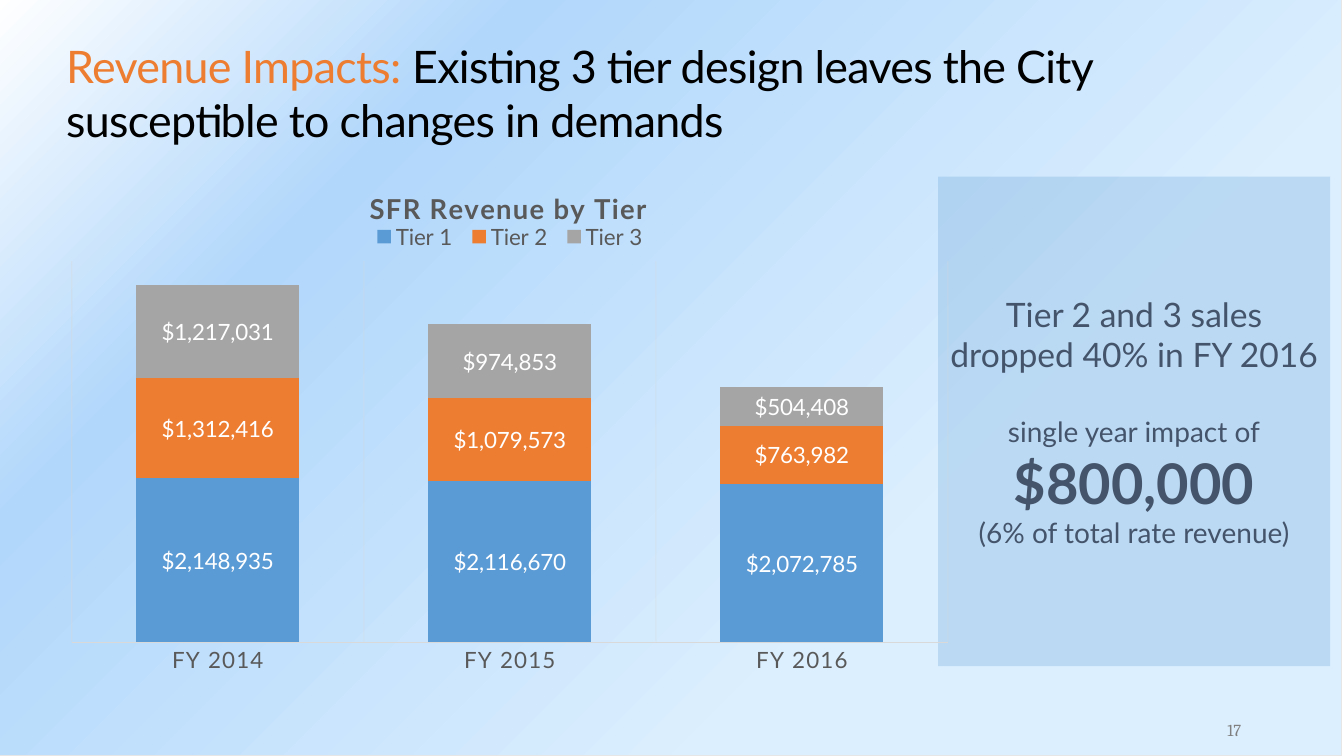
from pptx import Presentation
from pptx.chart.data import CategoryChartData
from pptx.dml.color import RGBColor
from pptx.enum.chart import XL_CHART_TYPE, XL_LABEL_POSITION, XL_LEGEND_POSITION, XL_TICK_MARK
from pptx.enum.shapes import MSO_SHAPE
from pptx.enum.text import MSO_ANCHOR, PP_ALIGN
from pptx.oxml import parse_xml
from pptx.oxml.ns import nsdecls
from pptx.util import Cm, Pt

STACK = XL_CHART_TYPE.COLUMN_STACKED
CENTER = XL_LABEL_POSITION.CENTER
TOP = XL_LEGEND_POSITION.TOP
NONE = XL_TICK_MARK.NONE
RECT = MSO_SHAPE.RECTANGLE
MID, LOW = MSO_ANCHOR.MIDDLE, MSO_ANCHOR.BOTTOM
LEFT, MIDDLE = PP_ALIGN.LEFT, PP_ALIGN.CENTER

HUES = {"blue": "5B9BD5", "orange": "ED7D31", "gray": "A5A5A5", "slate": "44546A",
        "text": "595959", "rule": "D9D9D9", "edge": "E7E6E6", "page": "808080",
        "white": "FFFFFF", "black": "000000"}
STOPS = [(30, "DCEFFE"), (75, "B1D7FB"), (100, "FFFFFF")]
FONT = "Lato"
MONEY = '"$"#,##0'

TITLE = [("Revenue Impacts: ", "orange"),
         ("Existing 3 tier design leaves the City susceptible to changes in demands", "black")]
PANEL = [("Tier 2 and 3 sales dropped 40% in FY 2016", 24, False, 0),
         ("single year impact of", 20, False, 29),
         ("$800,000", 40, True, 0),
         ("(6% of total rate revenue)", 20, False, 0)]
HEAD = "SFR Revenue by Tier"
YEARS = ["FY 2014", "FY 2015", "FY 2016"]
TIERS = [("Tier 1", "blue", (2148935, 2116670, 2072785)),
         ("Tier 2", "orange", (1312416, 1079573, 763982)),
         ("Tier 3", "gray", (1217031, 974853, 504408))]
PAGE = "17"

AREAS = {"back": (-0.05, 0, 33.86, 19.05), "title": (1.42, 0.84, 31.04, 2.97),
         "panel": (23.64, 4.45, 9.88, 12.34), "chart": (1.42, 4.23, 22.86, 13.34),
         "page": (29.95, 18.01, 2.31, 0.76)}


def area(name):
    return [Cm(n) for n in AREAS[name]]


def color(name):
    return RGBColor.from_string(HUES[name])


def style(font, size, hue, bold=False, face=FONT):
    font.size, font.bold, font.name = Pt(size), bold, face
    font.color.rgb = color(hue)


def fade(item, share):
    for tint in item.xpath(".//a:solidFill/a:srgbClr"):
        tint.append(parse_xml(f'<a:alpha {nsdecls("a")} val="{share * 1000}"/>'))


def block(slide, name):
    shape = slide.shapes.add_shape(RECT, *area(name))
    shape.shadow.inherit = False
    return shape


def label(slide, name, anchor):
    frame = slide.shapes.add_textbox(*area(name)).text_frame
    frame.word_wrap, frame.vertical_anchor = True, anchor
    return frame


def pin(node, spot, left, top, wide=None, high=None, inner=False):
    for old in node.xpath("c:layout"):
        node.remove(old)
    tags = '<c:layoutTarget val="inner"/>' if inner else ""
    tags += '<c:xMode val="edge"/><c:yMode val="edge"/>'
    for tag, part in zip("xywh", (left, top, wide, high)):
        if part is not None:
            tags += f'<c:{tag} val="{part}"/>'
    node.insert(spot, parse_xml(
        f'<c:layout {nsdecls("c")}><c:manualLayout>{tags}</c:manualLayout></c:layout>'))


def add_back(slide):
    back = block(slide, "back")
    back.fill.gradient()
    grad = back.element.xpath("p:spPr/a:gradFill")[0]
    stops = "".join(f'<a:gs pos="{at * 1000}"><a:srgbClr val="{hue}"/></a:gs>'
                    for at, hue in STOPS)
    grad.getparent().replace(grad, parse_xml(
        f'<a:gradFill {nsdecls("a")}><a:gsLst>{stops}</a:gsLst><a:path path="circle">'
        '<a:fillToRect l="100000" t="100000"/></a:path></a:gradFill>'))
    back.line.color.rgb, back.line.width = color("edge"), Pt(0.75)


def add_title(slide):
    line = label(slide, "title", MID).paragraphs[0]
    line.alignment = LEFT
    line.font.size, line.font.name = Pt(32), FONT
    for text, hue in TITLE:
        run = line.add_run()
        run.text = text
        run.font.color.rgb = color(hue)
        run.font._element.set("spc", "-50")


def add_panel(slide):
    panel = block(slide, "panel")
    panel.fill.solid()
    panel.fill.fore_color.rgb = color("blue")
    fade(panel.element.spPr, 25)
    panel.line.fill.background()
    frame = panel.text_frame
    frame.word_wrap, frame.vertical_anchor = True, MID
    for i, (text, size, bold, gap) in enumerate(PANEL):
        line = frame.add_paragraph() if i else frame.paragraphs[0]
        line.text, line.alignment = text, MIDDLE
        if gap:
            line.space_before = Pt(gap)
        style(line.font, size, "slate", bold)


def add_bars(slide):
    data = CategoryChartData(number_format=MONEY)
    data.categories = YEARS
    for name, hue, sums in TIERS:
        data.add_series(name, sums)
    chart = slide.shapes.add_chart(STACK, *area("chart"), data).chart
    style(chart.font, 16, "black")

    chart.has_title = True
    head = chart.chart_title.text_frame.paragraphs[0]
    head.text = HEAD
    style(head.font, 19.6, "text", True)
    head.font._element.set("spc", "100")
    chart.chart_title.include_in_layout = False
    pin(chart.element.xpath("c:chart/c:title")[0], 1, 0.34, 0.03)

    chart.has_legend = True
    key = chart.legend
    key.position, key.include_in_layout = TOP, False
    style(key.font, 16, "text")
    pin(chart.element.xpath("c:chart/c:legend")[0], 1, 0.34, 0.1, 0.32, 0.06)
    pin(chart.element.xpath("c:chart/c:plotArea")[0], 0, 0.017, 0.176, 0.966, 0.72, True)

    base = chart.category_axis
    base.major_tick_mark = base.minor_tick_mark = NONE
    style(base.tick_labels.font, 16, "text")
    base.tick_labels.font._element.set("spc", "100")
    base.has_major_gridlines = True
    for rule in (base.format.line, base.major_gridlines.format.line):
        rule.color.rgb, rule.width = color("rule"), Pt(0.75)
    fade(chart.element.xpath(".//c:catAx/c:majorGridlines")[0], 35)

    scale = chart.value_axis
    scale.minimum_scale, scale.maximum_scale = 0, 5000000
    scale.has_major_gridlines = False
    scale.visible = False

    plot = chart.plots[0]
    plot.gap_width, plot.overlap, plot.vary_by_categories = 79, 100, False
    for bars, (name, hue, sums) in zip(plot.series, TIERS):
        bars.format.fill.solid()
        bars.format.fill.fore_color.rgb = color(hue)
        marks = bars.data_labels
        marks.show_value, marks.position = True, CENTER
        marks.number_format, marks.number_format_is_linked = MONEY, False
        style(marks.font, 16, "white")


def add_page(slide):
    frame = label(slide, "page", LOW)
    frame.margin_left = frame.margin_right = Cm(0.13)
    line = frame.paragraphs[0]
    line.text, line.alignment = PAGE, MIDDLE
    style(line.font, 12, "page", face="Cambria")


def main():
    deck = Presentation()
    deck.slide_width, deck.slide_height = Cm(33.87), Cm(19.05)
    slide = deck.slides.add_slide(deck.slide_layouts[6])
    for step in (add_back, add_page, add_title, add_panel, add_bars):
        step(slide)
    deck.save("out.pptx")


if __name__ == "__main__":
    main()
